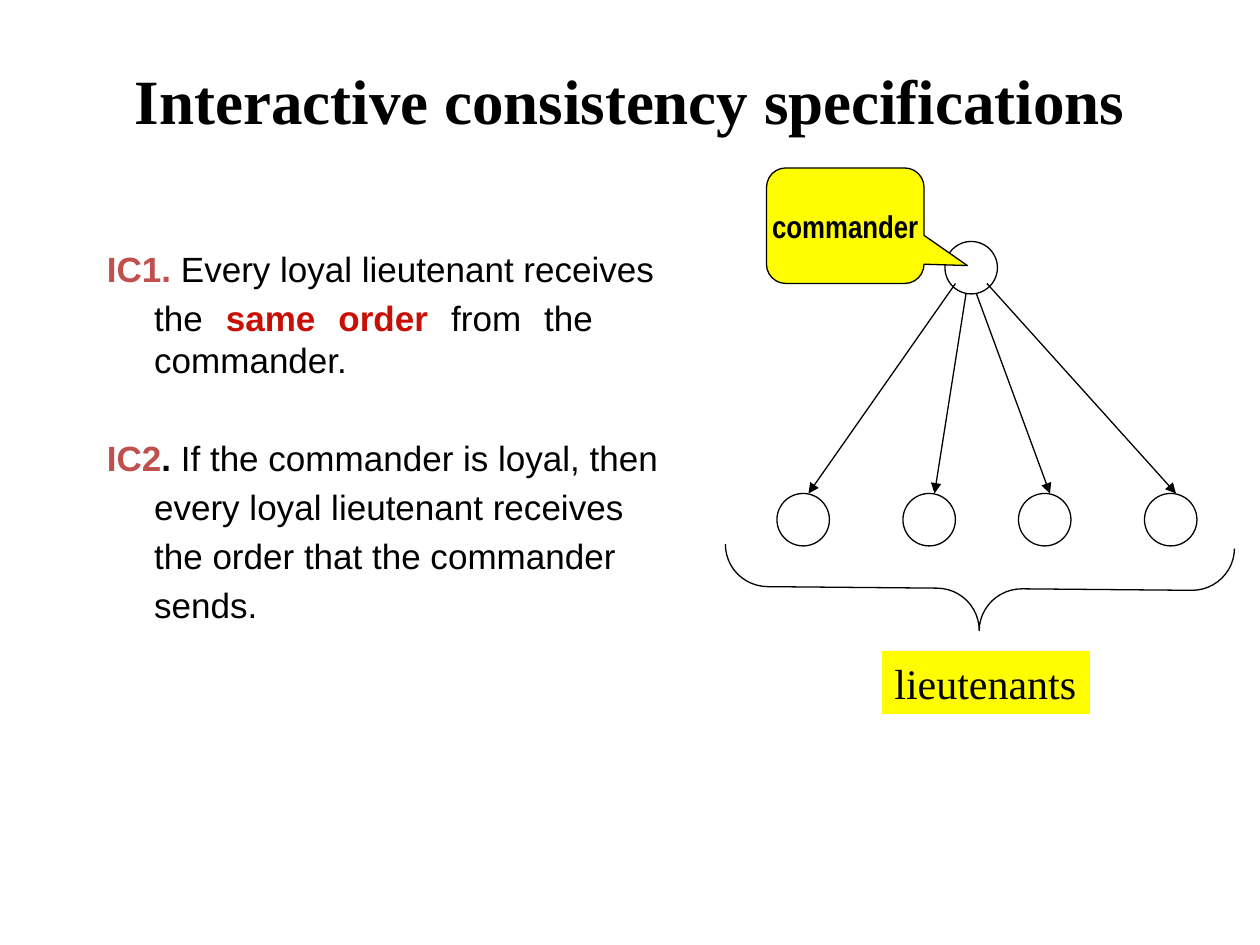
"""Build the slide on interactive consistency specifications."""
from pptx import Presentation
from pptx.dml.color import RGBColor
from pptx.enum.shapes import MSO_CONNECTOR, MSO_SHAPE
from pptx.enum.text import MSO_ANCHOR, PP_ALIGN
from pptx.oxml.ns import qn
from pptx.util import Pt
from lxml import etree

BLACK = RGBColor(0x00, 0x00, 0x00)
YELLOW = RGBColor(0xFF, 0xFD, 0x00)
BRICK = RGBColor(0xC0, 0x50, 0x4D)
RED = RGBColor(0xC7, 0x0F, 0x05)

STRAIGHT = MSO_CONNECTOR.STRAIGHT
OVAL = MSO_SHAPE.OVAL
CALLOUT = MSO_SHAPE.ROUNDED_RECTANGULAR_CALLOUT
BRACE = MSO_SHAPE.LEFT_BRACE
MIDDLE = MSO_ANCHOR.MIDDLE
LEFT, CENTER, JUSTIFY = PP_ALIGN.LEFT, PP_ALIGN.CENTER, PP_ALIGN.JUSTIFY

SERIF, SANS, NARROW = "Times New Roman", "Arial", "Arial Narrow"
NODE = 30
COMMANDER = (540, 138)
LIEUTENANT_TOP = 282
LIEUTENANT_LEFTS = (444, 516, 582, 654)
ORDER_STARTS = ((546, 162), (552, 168), (558, 168), (564, 162))
HANG = 27

# (indent, space before, right margin, runs)
SPECIFICATIONS = (
    (-HANG, 4, 0, (("IC1.", BRICK, True),
                   (" Every loyal lieutenant receives", BLACK, False))),
    (0, 4, 38, (("the ", BLACK, False), ("same order", RED, True),
                (" from the commander.", BLACK, False))),
    (-HANG, 32, 0, (("IC2", BRICK, True), (". ", BLACK, True),
                    ("If the commander is loyal, then", BLACK, False))),
    (0, 4, 0, (("every loyal lieutenant receives", BLACK, False),)),
    (0, 4, 0, (("the order that the commander", BLACK, False),)),
    (0, 4, 0, (("sends.", BLACK, False),)),
)


def style(font, name, size, color=BLACK, bold=False):
    font.name, font.size, font.bold = name, Pt(size), bold
    font.color.rgb = color


def set_label(s, text, name, size, bold=False, align=CENTER):
    tf = s.text_frame
    tf.text = text
    p = tf.paragraphs[0]
    p.alignment = align
    style(p.runs[0].font, name, size, bold=bold)
    return tf


def add_textbox(s, left, top, width, height, wrap=True):
    box = s.shapes.add_textbox(Pt(left), Pt(top), Pt(width), Pt(height))
    box.text_frame.word_wrap = wrap
    return box


def add_outline(s, kind, left, top, width, height, fill=None):
    sp = s.shapes.add_shape(kind, Pt(left), Pt(top), Pt(width), Pt(height))
    sp.shadow.inherit = False
    if fill is None:
        sp.fill.background()
    else:
        sp.fill.solid()
        sp.fill.fore_color.rgb = fill
    sp.line.color.rgb = BLACK
    sp.line.width = Pt(0.75)
    return sp


def add_arrow(s, start, end):
    c = s.shapes.add_connector(STRAIGHT, *(Pt(v) for v in start + end))
    c.line.color.rgb = BLACK
    c.line.width = Pt(0.75)
    etree.SubElement(c.line._get_or_add_ln(), qn("a:tailEnd"), type="triangle")
    etree.SubElement(c._element.spPr, qn("a:effectLst"))


def add_specifications(s):
    tf = add_textbox(s, 54, 138, 330, 324).text_frame
    for i, (indent, before, right, runs) in enumerate(SPECIFICATIONS):
        p = tf.add_paragraph() if i else tf.paragraphs[0]
        p.alignment, p.space_before = JUSTIFY, Pt(before)
        pPr = p._p.get_or_add_pPr()
        for key, value in (("marL", HANG), ("marR", right), ("indent", indent)):
            pPr.set(key, str(Pt(value)))
        for text, color, bold in runs:
            r = p.add_run()
            r.text = text
            style(r.font, SANS, 20, color, bold)


def add_hierarchy(s):
    add_outline(s, OVAL, *COMMANDER, NODE, NODE)
    for left, start in zip(LIEUTENANT_LEFTS, ORDER_STARTS):
        add_outline(s, OVAL, left, LIEUTENANT_TOP, NODE, NODE)
        add_arrow(s, start, (left + 18, LIEUTENANT_TOP))


def add_callout(s):
    sp = add_outline(s, CALLOUT, 438, 96, 90, 66, YELLOW)
    for i, value in enumerate((0.775, 0.345, 0.167)):
        sp.adjustments[i] = value
    tf = set_label(sp, "commander", NARROW, 18, bold=True)
    tf.word_wrap, tf.vertical_anchor = False, MIDDLE


def add_brace(s):
    sp = add_outline(s, BRACE, 535.7, 190.8, 48.2, 290.9)
    sp.rotation = 270.5
    sp.adjustments[0], sp.adjustments[1] = 0.505, 0.5


def main():
    prs = Presentation()
    prs.slide_width, prs.slide_height = Pt(720), Pt(540)
    s = prs.slides.add_slide(prs.slide_layouts[6])
    title = add_textbox(s, 54, 12, 612, 90)
    tf = set_label(title, "Interactive consistency specifications", SERIF, 36, bold=True)
    tf.vertical_anchor = MIDDLE
    add_specifications(s)
    add_hierarchy(s)
    add_callout(s)
    add_brace(s)
    label = add_textbox(s, 504, 372, 118.8, 36, wrap=False)
    label.fill.solid()
    label.fill.fore_color.rgb = YELLOW
    set_label(label, "lieutenants", SERIF, 24, align=LEFT)
    prs.save("out.pptx")


if __name__ == "__main__":
    main()
